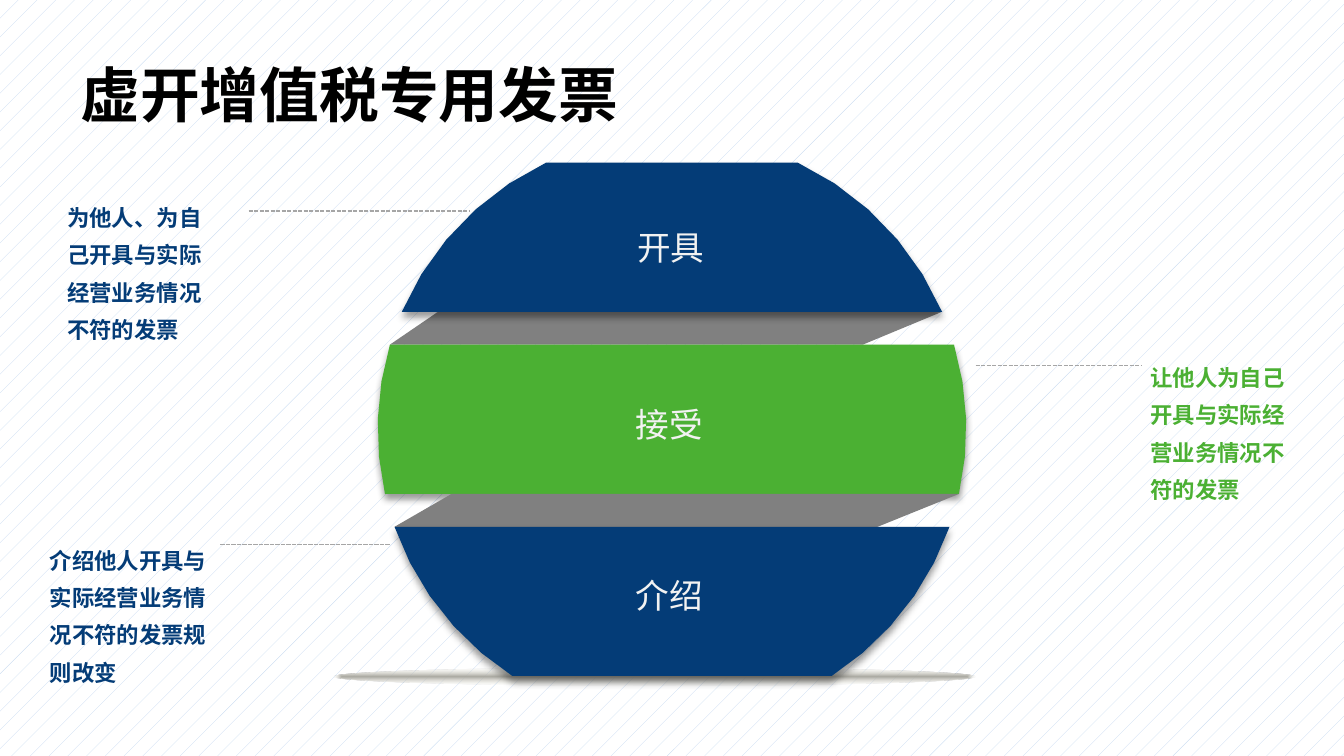
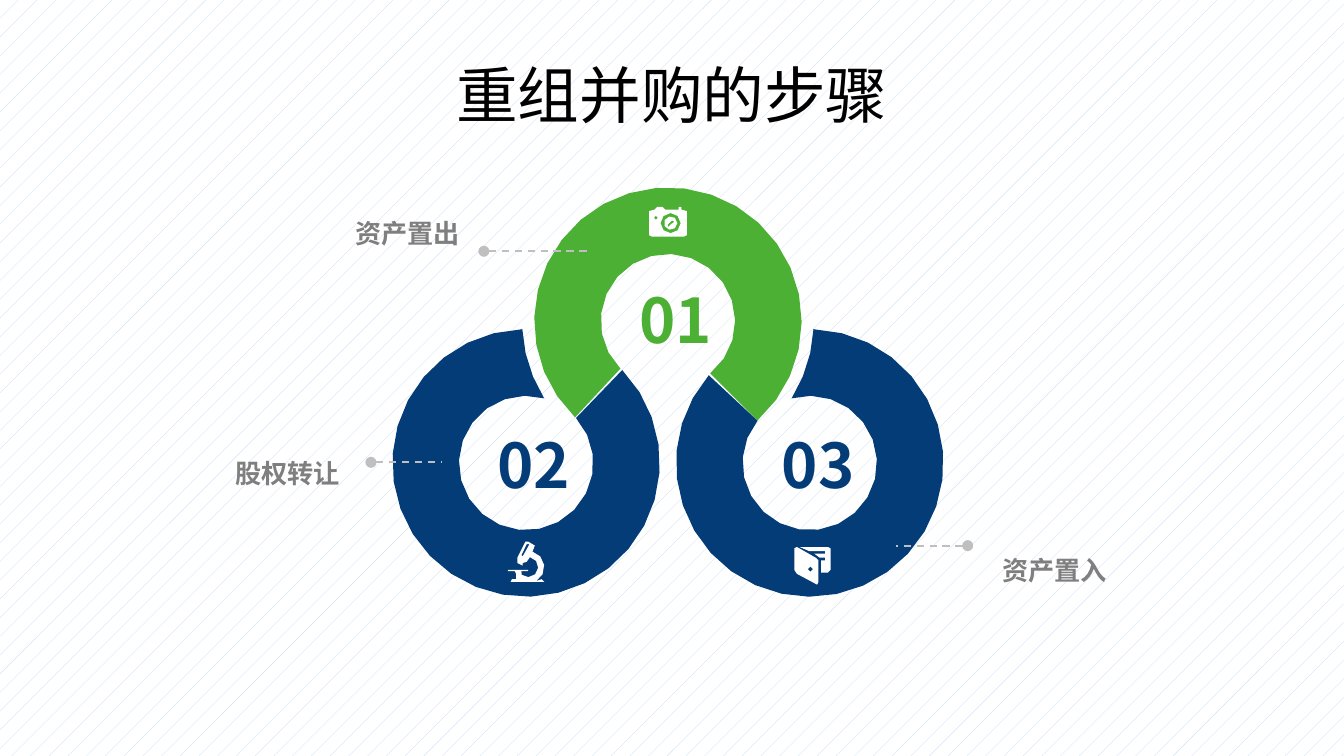
from collections import namedtuple
from math import asin, cos, degrees, radians, sin, sqrt

from lxml.etree import SubElement
from pptx import Presentation
from pptx.dml.color import RGBColor
from pptx.enum.dml import MSO_LINE, MSO_PATTERN
from pptx.enum.shapes import MSO_CONNECTOR, MSO_SHAPE
from pptx.enum.text import MSO_ANCHOR, MSO_AUTO_SIZE, PP_ALIGN
from pptx.oxml import parse_xml
from pptx.oxml.ns import nsdecls, qn
from pptx.util import Inches, Pt

NAVY = RGBColor(0x04, 0x3C, 0x77)
GREEN = RGBColor(0x4B, 0xB0, 0x33)
GREY = RGBColor(0x80, 0x80, 0x80)
CAPTION_GREY = RGBColor(0x7F, 0x7F, 0x7F)
NOTE_LINE = RGBColor(0xA6, 0xA6, 0xA6)
STEP_LINE = RGBColor(0xBF, 0xBF, 0xBF)
PALE = RGBColor(0xF2, 0xF2, 0xF2)
WHITE = RGBColor(0xFF, 0xFF, 0xFF)
BLACK = RGBColor(0, 0, 0)
PAPER_DOTS = RGBColor(0xC6, 0xD9, 0xF1)
BODY_FONT = "Noto Sans CJK SC"

# Every position is counted in cells of a grid 1000 columns wide.
SLIDE_WIDTH, SLIDE_HEIGHT = Inches(10), Inches(5.625)
CELL = SLIDE_WIDTH // 1000
Box = namedtuple("Box", "left top width height")
TITLE_BOX = Box(50, 23, 900, 94)
SLIDE_BOX = Box(0, 0, 1000, 562)


def cells(*counts):
    return [round(count * CELL) for count in counts]


def inside(box, left, top, width, height):
    return Box(box.left + left, box.top + top, width, height)


def arc(x, y, radius, start, stop):
    """Points on a circle, more for a larger one; degrees clockwise from the right."""
    count = max(2, round(abs(stop - start) / 360 * 3 * sqrt(radius)))
    angles = [radians(start + (stop - start) * i / count) for i in range(count + 1)]
    return [(x + radius * cos(a), y + radius * sin(a)) for a in angles]


def circle(x, y, radius):
    return arc(x, y, radius, 0, 360)[:-1]


def add_outline(shapes, box, color, *contours):
    """Closed outline of one or more contours given relative to the box."""
    placed = [[cells(box.left + x, box.top + y) for x, y in points]
              for points in contours]
    builder = shapes.build_freeform(*placed[0][0])
    for number, points in enumerate(placed):
        if number:
            builder.move_to(*points[0])
        builder.add_line_segments(points[1:], close=True)
    shape = builder.convert_to_shape()
    shape.fill.solid()
    shape.fill.fore_color.rgb = color
    shape.line.fill.background()
    shape.shadow.inherit = False
    return shape


def add_drop_shadow(shape):
    effects = shape._element.spPr.find(qn("a:effectLst"))
    effects.append(parse_xml(
        f'<a:outerShdw {nsdecls("a")} blurRad="{Pt(4)}" dist="{Pt(3)}" dir="5400000" '
        'algn="t" rotWithShape="0"><a:srgbClr val="000000"><a:alpha val="40000"/>'
        '</a:srgbClr></a:outerShdw>'))


def add_text(slide, box, text, size, color, bold=False, font=BODY_FONT,
             align=PP_ALIGN.LEFT, spacing=None, wrap=True, margins=None,
             anchor=MSO_ANCHOR.TOP, grow=True):
    shape = slide.shapes.add_textbox(*cells(*box))
    frame = shape.text_frame
    frame.word_wrap = wrap
    frame.vertical_anchor = anchor
    frame.auto_size = MSO_AUTO_SIZE.SHAPE_TO_FIT_TEXT if grow else MSO_AUTO_SIZE.NONE
    if margins:
        frame.margin_left = frame.margin_right = Inches(margins[0])
        frame.margin_top = frame.margin_bottom = Inches(margins[1])
    frame.text = text
    para = frame.paragraphs[0]
    para.alignment = align
    if spacing:
        para.line_spacing = spacing
    span = para.runs[0]
    span.font.size = Pt(size)
    span.font.bold = bold
    span.font.color.rgb = color
    span.font.name = font
    SubElement(span.font._element, qn("a:ea")).set("typeface", font)


def add_leader(slide, start, stop, y, color, width, dash, dot=False):
    """Dashed level line, with a round dot at its start if asked."""
    line = slide.shapes.add_connector(MSO_CONNECTOR.STRAIGHT,
                                      *cells(start, y, stop, y))
    line.line.color.rgb = color
    line.line.width = Pt(width)
    line.line.dash_style = dash
    properties = line._element.spPr
    if dot:
        SubElement(properties.find(qn("a:ln")), qn("a:headEnd")).set("type", "oval")
    SubElement(properties, qn("a:effectLst"))


def add_page(deck, title, **title_style):
    slide = deck.slides.add_slide(deck.slide_layouts[6])
    paper = slide.background.fill
    paper.patterned()
    paper.pattern = MSO_PATTERN.PERCENT_5
    paper.fore_color.rgb = PAPER_DOTS
    paper.back_color.rgb = WHITE
    add_text(slide, TITLE_BOX, title, color=BLACK, anchor=MSO_ANCHOR.MIDDLE,
             grow=False, **title_style)
    return slide


def add_floor_shadow(slide, box):
    floor = slide.shapes.add_shape(MSO_SHAPE.OVAL, *cells(*box))
    floor.line.fill.background()
    floor.shadow.inherit = False
    properties = floor._element.spPr
    properties.insert(2, parse_xml(
        f'<a:gradFill {nsdecls("a")} rotWithShape="1"><a:gsLst>'
        '<a:gs pos="0"><a:srgbClr val="AAA9A1"/></a:gs>'
        '<a:gs pos="100000"><a:srgbClr val="EEECE1"><a:alpha val="0"/></a:srgbClr></a:gs>'
        '</a:gsLst><a:path path="shape"><a:fillToRect l="50000" t="50000" '
        'r="50000" b="50000"/></a:path></a:gradFill>'))


def add_sliced_sphere(slide, box):
    """Three bands cut from one circle, joined by two slanted ribbons."""
    radius = box.width / 2
    band_height, pitch, first = 111, 135.5, 21
    tops = [first + pitch * i for i in range(3)]

    def add_band(index, color):
        upper, lower = [degrees(asin((y - radius) / radius))
                        for y in (tops[index], tops[index] + band_height)]
        right = arc(radius, radius, radius, upper, lower)
        left = arc(radius, radius, radius, 180 - lower, 180 - upper)
        add_drop_shadow(add_outline(slide.shapes, box, color, right + left))

    def add_ribbon(index, upper_left, lower_right):
        upper, lower = tops[index] + band_height, tops[index + 1]
        half_upper, half_lower = [sqrt(radius ** 2 - (y - radius) ** 2)
                                  for y in (upper, lower)]
        add_outline(slide.shapes, box, GREY,
                    [(upper_left, upper), (radius + half_upper, upper),
                     (lower_right, lower), (radius - half_lower, lower)])

    add_floor_shadow(slide, inside(box, -33, 397, 478, 13))
    add_ribbon(0, 45, 361)
    add_band(1, GREEN)
    add_ribbon(1, 55, 372)
    add_band(0, NAVY)
    add_band(2, NAVY)
    for text, left, top in (("开具", 88, 64), ("接受", 87, 196), ("介绍", 87, 323)):
        add_text(slide, inside(box, left, top, 260, 40), text, 18, PALE,
                 align=PP_ALIGN.CENTER)


def add_notes(slide, box):
    notes = (
        ("为他人、为自己开具与实际经营业务情况不符的发票", NAVY, (43, 140, 118, 117), (185, 349, 157)),
        ("让他人为自己开具与实际经营业务情况不符的发票", GREEN, (849, 259, 123, 117), (726, 849, 272)),
        ("介绍他人开具与实际经营业务情况不符的发票规则改变", NAVY, (30, 395, 132, 117), (164, 290, 405)),
    )
    for text, color, place, (start, stop, y) in notes:
        add_leader(slide, box.left + start, box.left + stop, box.top + y,
                   NOTE_LINE, 0.75, MSO_LINE.SQUARE_DOT)
        add_text(slide, inside(box, *place), text, 12, color, bold=True,
                 spacing=Pt(20), margins=(0.07, 0.04))


def add_rings(slide, box):
    """Upper ring whose two open ends run on into the lower rings."""
    outer, inner, notch = 99.5, 50, 108.5
    middle = box.width / 2
    peak = (middle, 99)
    lower = (99.5, 204.5)

    def side_ring(seam):
        return (arc(*lower, outer, 268, -seam)
                + arc(*lower, inner, 2 - seam, 286)
                + arc(*peak, notch, 148, 177))

    add_outline(slide.shapes, box, NAVY, side_ring(44))
    add_outline(slide.shapes, box, GREEN,
                arc(*peak, outer, 48, -226) + arc(*peak, inner, -225, 51))
    add_outline(slide.shapes, box, NAVY,
                [(2 * middle - x, y) for x, y in side_ring(41)])
    for text, color, left, top in (("01", GREEN, 174, 65), ("02", NAVY, 68, 173),
                                   ("03", NAVY, 280, 173)):
        add_text(slide, inside(box, left, top, 77, 66), text, 33, color,
                 bold=True, wrap=False)


def add_camera(slide, box):
    group = slide.shapes.add_group_shape()
    add_outline(group.shapes, box, WHITE, circle(16, 12, 5),
                [(14, 15), (14, 13), (17, 10), (19, 11), (16, 13)])
    body = [(0, 3), (4, 2), (6, 0), (10, 0), (12, 2), (22, 2), (22, 0),
            (24, 0), (24, 2), (28, 3), (28, 21), (26, 22), (2, 22), (0, 21)]
    add_outline(group.shapes, box, WHITE, body, circle(16, 12, 7.5), circle(5, 8, 1.5))


def add_folder(slide, box):
    group = slide.shapes.add_group_shape()
    sheet = [(4, 0), (25, 0), (27, 1), (27, 17), (25, 19), (20, 19), (20, 10),
             (23, 10), (23, 8), (19, 8), (15, 5), (23, 5), (23, 3), (11, 3)]
    cover = [(0, 1), (2, 0), (16, 8), (18, 10), (18, 26), (17, 28), (2, 20), (0, 17)]
    add_outline(group.shapes, box, WHITE, sheet)
    add_outline(group.shapes, box, WHITE, cover, circle(12, 16.5, 2))


def add_microscope(slide, box):
    foot = [(2, 30), (3, 28), (6, 28), (6, 24), (5, 22), (0, 22), (0, 21),
            (15, 21), (15, 22), (10, 22)]
    tube = [(14, 15), (11, 16), (11, 18), (7, 16), (7, 12), (13, 0),
            (15, 0), (20, 3), (18, 8)]
    outline = (foot + arc(15, 19, 7.5, 130, -80) + tube
               + arc(15, 19, 12, -75, 60) + [(25, 28), (27, 30)])
    add_outline(slide.shapes, box, WHITE, outline,
                [(16, 2), (11, 11), (10, 10), (14, 2)])


def add_step_captions(slide, box):
    captions = (
        ("资产置出", (248, 145, 104, 45), PP_ALIGN.RIGHT, 1.5, True, (360, 437, 187)),
        ("股权转让", (164, 324, 99, 45), PP_ALIGN.RIGHT, 1.5, False, (276, 329, 344)),
        ("资产置入", (736, 384, 99, 57), PP_ALIGN.LEFT, 2.0, False, (720, 667, 406)),
    )
    for text, place, align, spacing, wrap, (start, stop, y) in captions:
        add_leader(slide, box.left + start, box.left + stop, box.top + y,
                   STEP_LINE, 1, MSO_LINE.DASH, dot=True)
        add_text(slide, inside(box, *place), text, 14, CAPTION_GREY, bold=True,
                 align=align, spacing=spacing, wrap=wrap)


def add_invoice_slide(deck):
    slide = add_page(deck, "虚开增值税专用发票", size=32, font="Arial", bold=True)
    add_sliced_sphere(slide, Box(281, 100, 438, 438))
    add_notes(slide, SLIDE_BOX)


def add_merger_slide(deck):
    slide = add_page(deck, "重组并购的步骤", size=33, font="Calibri",
                     align=PP_ALIGN.CENTER)
    add_rings(slide, Box(292, 140, 410, 304))
    add_camera(slide, Box(483, 154, 28, 22))
    add_folder(slide, Box(591, 407, 27, 28))
    add_microscope(slide, Box(378, 403, 27, 30))
    add_step_captions(slide, SLIDE_BOX)


def main():
    deck = Presentation()
    deck.slide_width, deck.slide_height = SLIDE_WIDTH, SLIDE_HEIGHT
    add_invoice_slide(deck)
    add_merger_slide(deck)
    deck.save("out.pptx")


if __name__ == "__main__":
    main()
